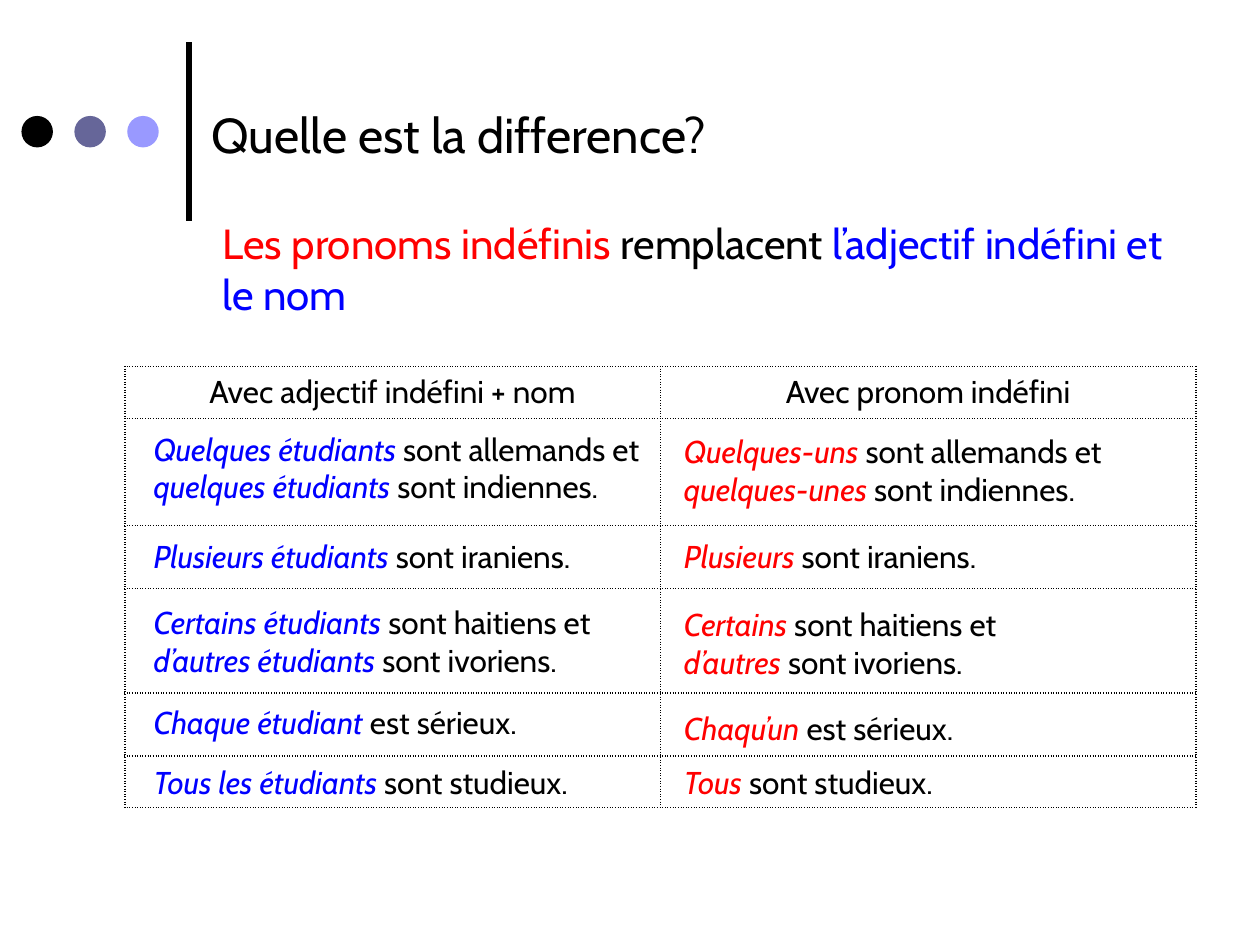
from lxml import etree
from pptx import Presentation
from pptx.dml.color import RGBColor
from pptx.enum import shapes, text
from pptx.oxml.ns import qn
from pptx.util import Inches, Pt

FONT = "Cabin"
COLORS = {"black": "000000", "red": "FF0000", "blue": "0000FF",
          "slate": "666699", "lilac": "9999FF"}

TITLE = [[("Quelle est la difference?", "black")]]
RULE = [[("Les pronoms indéfinis ", "red"), ("remplacent ", "black"),
         ("l’adjectif indéfini et le nom", "blue")]]
HEADS = ["Avec adjectif indéfini + nom", "Avec pronom indéfini"]
ROWS = [0.41, 0.85, 0.5, 0.83, 0.5, 0.41]
DOTS = ["black", "slate", "lilac"]

# Each example: top, then paragraphs of (stressed words, plain words) pairs
EXAMPLES = [
    (1.12, "blue", [
        (3.36, [[("Quelques étudiants ", "sont allemands et "),
                 ("quelques étudiants ", "sont indiennes.")]]),
        (4.21, [[("Plusieurs étudiants ", "sont iraniens.")]]),
        (4.74, [[("Certains étudiants ", "sont haitiens et")],
                [("d’autres étudiants ", "sont ivoriens.")]]),
        (5.53, [[("Chaque étudiant ", "est sérieux.")]]),
        (6.01, [[("Tous les étudiants ", "sont studieux.")]]),
    ]),
    (5.33, "red", [
        (3.38, [[("Quelques-uns ", "sont allemands et "),
                 ("quelques-unes ", "sont indiennes.")]]),
        (4.21, [[("Plusieurs ", "sont iraniens.")]]),
        (4.75, [[("Certains ", "sont haitiens et")],
                [("d’autres ", "sont ivoriens.")]]),
        (5.58, [[("Chaqu’un ", "est sérieux.")]]),
        (6.01, [[("Tous ", "sont studieux.")]]),
    ]),
]


def rgb(name):
    return RGBColor.from_string(COLORS[name])


def style(para, size):
    para.font.name, para.font.size = FONT, Pt(size)


def write(slide, box, paras, size, stress=None):
    """Add a text box; runs in the stress colour are italic."""
    frame = slide.shapes.add_textbox(*map(Inches, box)).text_frame
    frame.word_wrap = True
    frame.auto_size = text.MSO_AUTO_SIZE.SHAPE_TO_FIT_TEXT
    for i, runs in enumerate(paras):
        para = frame.add_paragraph() if i else frame.paragraphs[0]
        style(para, size)
        for words, color in runs:
            run = para.add_run()
            run.text = words
            run.font.color.rgb = rgb(color)
            if color == stress:
                run.font.italic = True


def border(cell):
    props = cell._tc.get_or_add_tcPr()
    for side in ("lnL", "lnR", "lnT", "lnB"):
        line = etree.SubElement(props, qn("a:" + side), w=str(Pt(1)))
        fill = etree.SubElement(line, qn("a:solidFill"))
        etree.SubElement(fill, qn("a:srgbClr"), val=COLORS["black"])
        etree.SubElement(line, qn("a:prstDash"), val="sysDot")


def decorate(slide):
    bar = slide.shapes.add_connector(
        shapes.MSO_CONNECTOR.STRAIGHT,
        *map(Inches, (1.5, 1.75, 1.5, 0.33)))
    bar.line.color.rgb = rgb("black")
    bar.line.width = Pt(3)
    etree.SubElement(bar._element.spPr, qn("a:effectLst"))
    for i, color in enumerate(DOTS):
        dot = slide.shapes.add_shape(
            shapes.MSO_SHAPE.OVAL,
            *map(Inches, (0.17 + 0.42 * i, 0.92, 0.25, 0.25)))
        dot.shadow.inherit = False
        dot.fill.solid()
        dot.fill.fore_color.rgb = rgb(color)
        dot.line.fill.background()


def add_grid(slide):
    table = slide.shapes.add_table(
        len(ROWS), len(HEADS),
        *map(Inches, (0.99, 2.91, 8.5, sum(ROWS)))).table
    table.first_row = table.horz_banding = False
    for row, height in zip(table.rows, ROWS):
        row.height = Inches(height)
    for cell in table.iter_cells():
        border(cell)
        cell.fill.background()
        style(cell.text_frame.paragraphs[0], 18)
    for col, head in enumerate(HEADS):
        para = table.cell(0, col).text_frame.paragraphs[0]
        para.alignment = text.PP_ALIGN.CENTER
        para.add_run().text = head
        para.font.color.rgb = rgb("black")


def main():
    deck = Presentation()
    deck.slide_width, deck.slide_height = Inches(10), Inches(7.5)
    slide = deck.slides.add_slide(deck.slide_layouts[6])
    decorate(slide)
    write(slide, (1.58, 0.78, 8.17, 0.57), TITLE, 28)
    write(slide, (1.67, 1.68, 7.83, 0.91), RULE, 24)
    add_grid(slide)
    for left, stress, items in EXAMPLES:
        for top, paras in items:
            runs = [[run for key, rest in pairs
                     for run in ((key, stress), (rest, "black"))]
                    for pairs in paras]
            tall = 0.71 if sum(map(len, paras)) > 1 else 0.4
            write(slide, (left, top, 4.42, tall), runs, 18, stress)
    deck.save("out.pptx")


if __name__ == "__main__":
    main()
